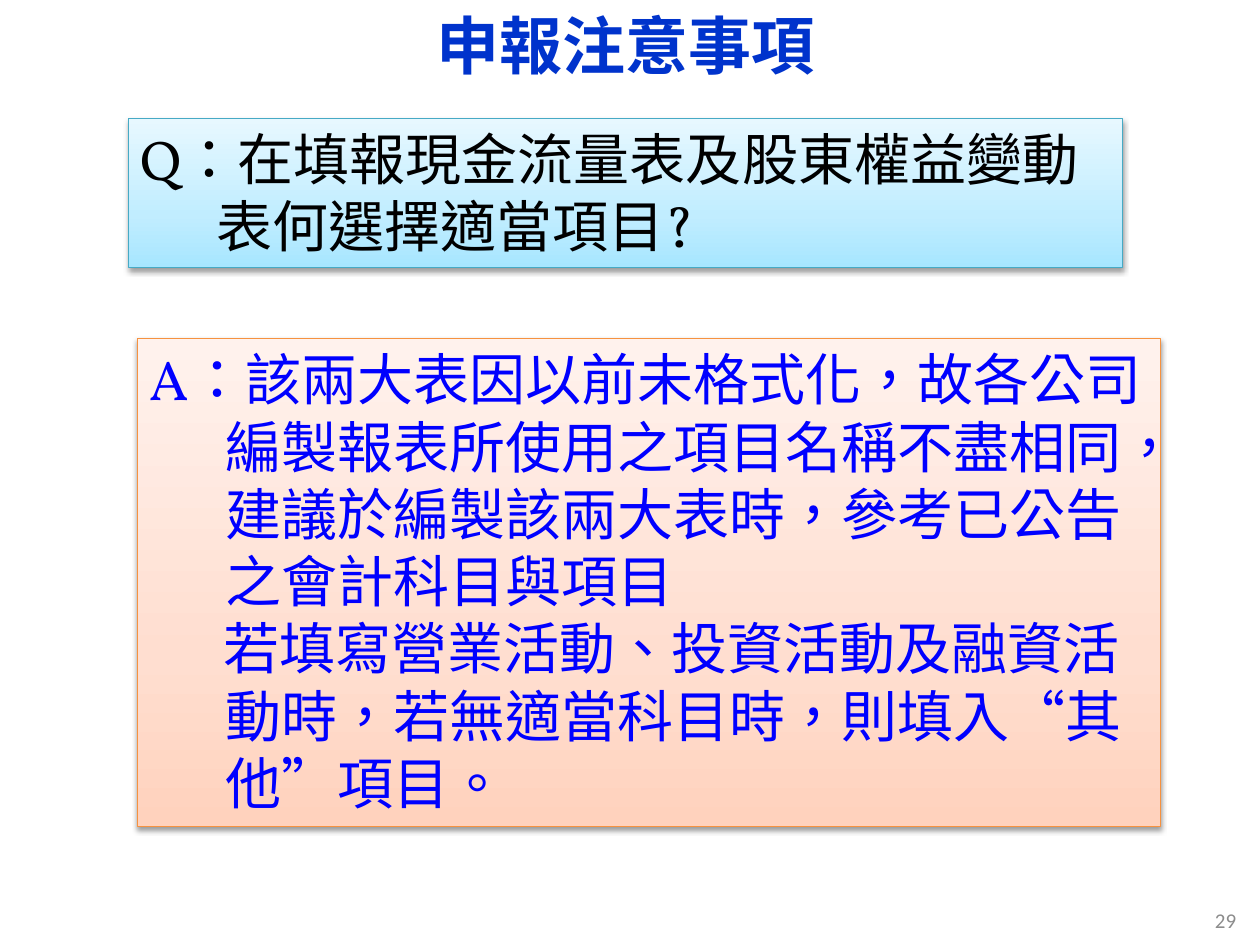
"""Build the slide of filing notes with a question box and an answer box."""
import pptx
import pptx.dml.color
import pptx.enum.shapes
import pptx.enum.text
import pptx.oxml
import pptx.oxml.ns
import pptx.util

Cm, Pt = pptx.util.Cm, pptx.util.Pt
RGB = pptx.dml.color.RGBColor
ALIGN = pptx.enum.text.PP_ALIGN
ANCHOR = pptx.enum.text.MSO_ANCHOR
GROW = pptx.enum.text.MSO_AUTO_SIZE.SHAPE_TO_FIT_TEXT
RECT = pptx.enum.shapes.MSO_SHAPE.RECTANGLE
qn = pptx.oxml.ns.qn
NS = pptx.oxml.ns.nsdecls("a")

GRAY = RGB(0x8C, 0x8C, 0x8C)
NAVY = RGB(0x00, 0x33, 0xCC)
BLACK = RGB(0x00, 0x00, 0x00)
BLUE = RGB(0x00, 0x00, 0xFF)
TEAL = RGB(0x46, 0xAA, 0xC5)
ORANGE = RGB(0xF6, 0x92, 0x40)
SKY = [RGB(0xA7, 0xE6, 0xFF), RGB(0xC1, 0xED, 0xFF), RGB(0xE7, 0xF8, 0xFF)]
PEACH = [RGB(0xFF, 0xD2, 0xBD), RGB(0xFF, 0xDE, 0xD0), RGB(0xFF, 0xF2, 0xED)]
STOPS = [0, 35, 100]
SANS = "Noto Sans CJK SC"
SHADOW = (
    f'<a:outerShdw {NS} blurRad="40000" dist="20000" dir="5400000" rotWithShape="0">'
    '<a:srgbClr val="000000"><a:alpha val="38000"/></a:srgbClr></a:outerShdw>'
)


def write(para, text, color, form):
    run = para.add_run()
    run.text = text
    run.font.color.rgb = color
    for key, val in form.items():
        setattr(run.font, key, val)
    props = run._r.get_or_add_rPr()
    props.set("lang", "zh-TW")
    props.append(pptx.oxml.parse_xml(f'<a:ea {NS} typeface="{SANS}"/>'))


deck = pptx.Presentation()
deck.slide_width, deck.slide_height = Cm(25.4), Cm(19.05)
slide = deck.slides.add_slide(deck.slide_layouts[6])

labels = [
    ("29", (19.25, 18.03, 5.92, 1.02), ALIGN.RIGHT, GRAY,
     {"size": Pt(12), "name": "Calibri"}),
    ("申報注意事項", (1.19, 0.18, 22.86, 1.42), ALIGN.CENTER, NAVY,
     {"size": Pt(36), "name": SANS, "bold": True}),
]
for text, place, align, color, form in labels:
    frame = slide.shapes.add_textbox(*map(Cm, place)).text_frame
    frame.word_wrap = True
    frame.vertical_anchor = ANCHOR.MIDDLE
    frame.paragraphs[0].alignment = align
    write(frame.paragraphs[0], text, color, form)

body = {"size": Pt(32), "name": "Vollkorn"}
question = [("Q：在填報現金流量表及股東權益變動表何選擇適當項目?", -1.52)]
answer = [
    ("A：該兩大表因以前未格式化，故各公司編製報表所使用之項目名稱不盡相同，"
     "建議於編製該兩大表時，參考已公告之會計科目與項目", -1.52),
    ("若填寫營業活動、投資活動及融資活動時，若無適當科目時，則填入“其他”項目。", -0.03),
]
boxes = [
    (question, (2.59, 2.39, 20.04, 3), SKY, TEAL, BLACK),
    (answer, (2.77, 6.83, 20.62, 9.83), PEACH, ORANGE, BLUE),
]
for paras, place, shades, edge, color in boxes:
    box = slide.shapes.add_shape(RECT, *map(Cm, place))
    box.line.color.rgb = edge
    box.line.width = Pt(0.75)
    box.fill.gradient()
    box.fill.gradient_angle = 90
    stops = box._element.spPr.find(".//" + qn("a:gsLst"))
    for old in list(stops):
        stops.remove(old)
    for pos, shade in zip(STOPS, shades):
        stops.append(pptx.oxml.parse_xml(
            f'<a:gs {NS} pos="{pos * 1000}"><a:srgbClr val="{shade}"/></a:gs>'))
    box.shadow.inherit = False
    box._element.spPr.find(qn("a:effectLst")).append(pptx.oxml.parse_xml(SHADOW))

    frame = box.text_frame
    frame.word_wrap = True
    frame.auto_size = GROW
    frame.vertical_anchor = ANCHOR.TOP
    for num, (text, indent) in enumerate(paras):
        para = frame.add_paragraph() if num else frame.paragraphs[0]
        para.alignment = ALIGN.LEFT
        props = para._p.get_or_add_pPr()
        props.set("marL", str(Cm(1.52)))
        props.set("indent", str(Cm(indent)))
        write(para, text, color, body)

deck.save("out.pptx")
